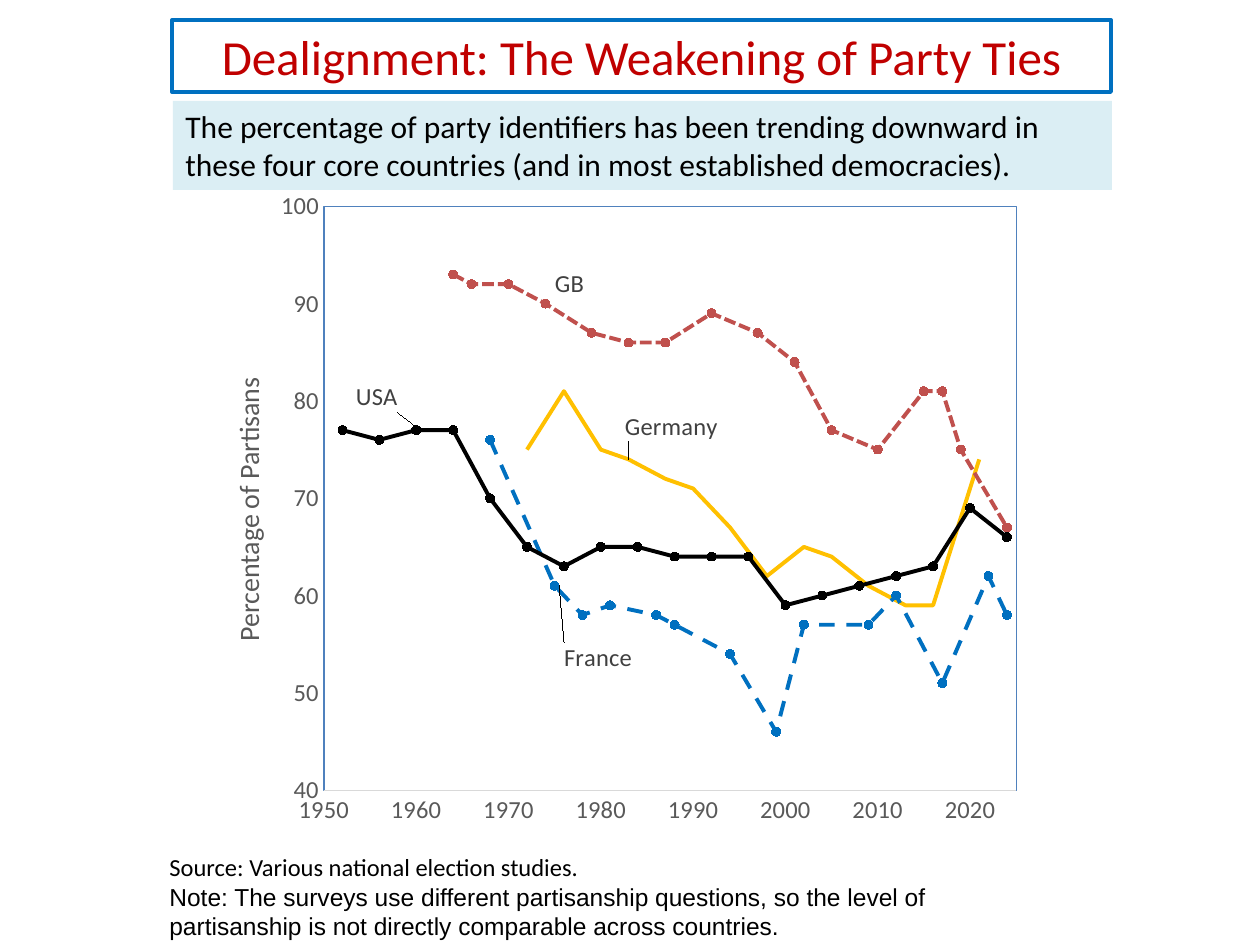
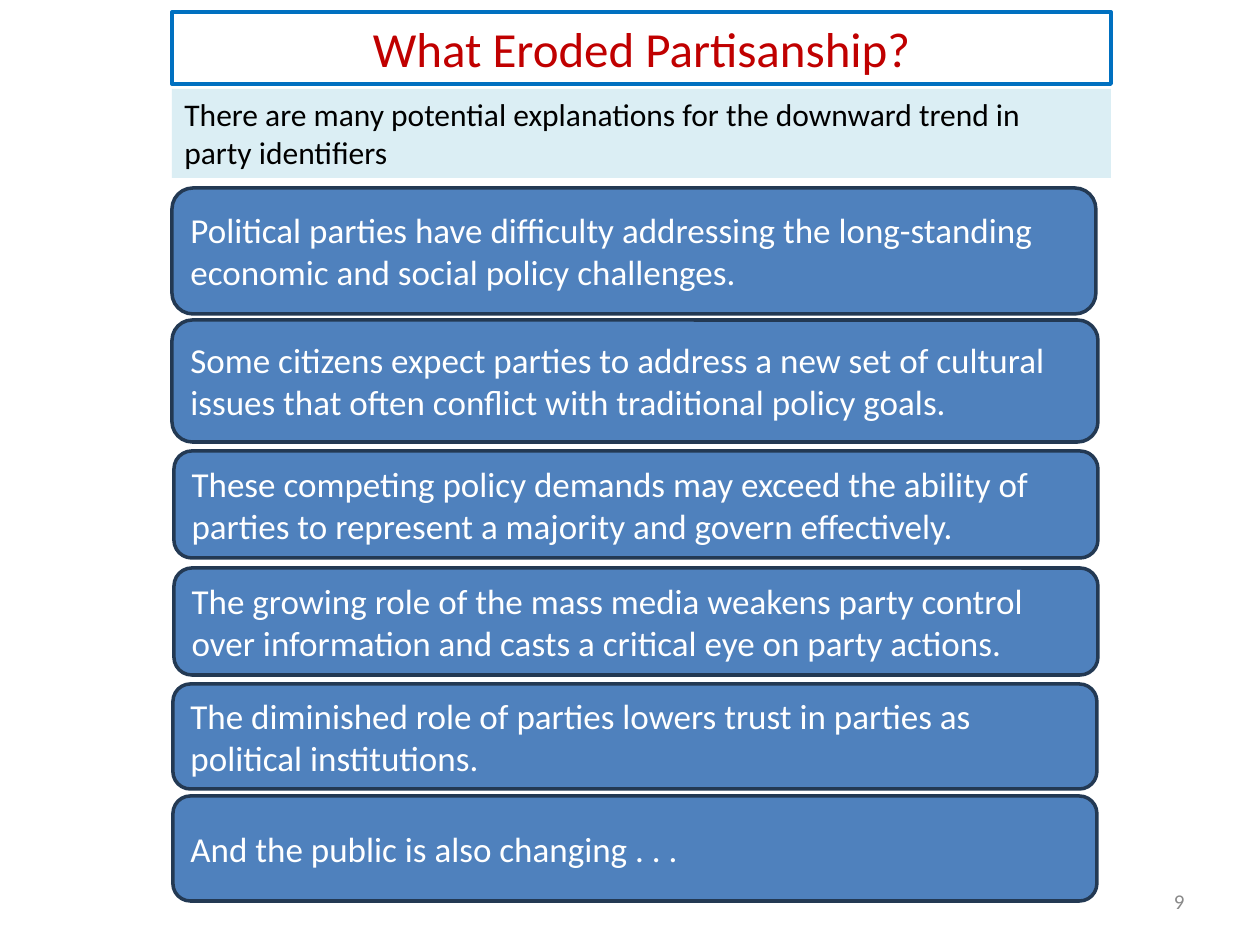
import lxml.etree
import pptx
import pptx.chart.data
import pptx.dml.color
import pptx.enum.chart
import pptx.enum.dml
import pptx.enum.shapes
import pptx.enum.text
import pptx.oxml.ns
import pptx.util

PX = 914400 // 126
Pt = pptx.util.Pt
qn = pptx.oxml.ns.qn
rgb = pptx.dml.color.RGBColor.from_string
SHAPE = pptx.enum.shapes.MSO_SHAPE
ALIGN = pptx.enum.text.PP_ALIGN
ANCHOR = pptx.enum.text.MSO_ANCHOR
DASH = pptx.enum.dml.MSO_LINE
MARKER = pptx.enum.chart.XL_MARKER_STYLE
TICK = pptx.enum.chart.XL_TICK_MARK

RED, BLUE, BLACK, WHITE, GREY = "C00000", "0070C0", "000000", "FFFFFF", "595959"
PALE, BOX_FILL, BOX_LINE = "DBEEF4", "4F81BD", "233953"
TITLE = {"size": 28, "color": RED, "line": (BLUE, 2.25), "align": ALIGN.CENTER,
         "anchor": ANCHOR.MIDDLE}
BAND = {"size": 18, "color": BLACK, "fill": PALE}
REASON = {"size": 20, "color": WHITE, "fill": BOX_FILL, "line": (BOX_LINE, 2),
          "anchor": ANCHOR.MIDDLE}


def style_box(sp, box, text, size, color, fill=None, line=None,
              align=ALIGN.LEFT, anchor=ANCHOR.TOP):
    """Place a shape or placeholder (box in px) and format its text."""
    for name, value in zip(("left", "top", "width", "height"), box):
        setattr(sp, name, value * PX)
    if fill:
        sp.fill.solid()
        sp.fill.fore_color.rgb = rgb(fill)
    else:
        sp.fill.background()
    if line:
        sp.line.color.rgb = rgb(line[0])
        sp.line.width = Pt(line[1])
    else:
        sp.line.fill.background()
    tf = sp.text_frame
    tf.text = text
    tf.word_wrap = True
    tf.auto_size = pptx.enum.text.MSO_AUTO_SIZE.NONE
    tf.vertical_anchor = anchor
    for p in tf.paragraphs:
        p.alignment = align
        for r in p.runs:
            r.font.name, r.font.size = "Calibri", Pt(size)
            r.font.color.rgb = rgb(color)
    return tf


def set_layout(parent, index, **values):
    """Give a chart part a manual layout, in fractions of the chart."""
    for old in parent.findall(qn("c:layout")):
        parent.remove(old)
    layout = lxml.etree.Element(qn("c:layout"))
    manual = lxml.etree.SubElement(layout, qn("c:manualLayout"))
    for name, value in values.items():
        lxml.etree.SubElement(manual, qn("c:" + name)).set("val", str(value))
    parent.insert(index, layout)


prs = pptx.Presentation()
prs.slide_width, prs.slide_height = pptx.util.Inches(10), pptx.util.Inches(7.5)

# Title and pale band on both slides
slides = []
for title, title_top, band, band_left, band_top in [
    ("Dealignment: The Weakening of Party Ties", 20,
     "The percentage of party identifiers has been trending downward in these "
     "four core countries (and in most established democracies).", 173, 101),
    ("What Eroded Partisanship?", 12,
     "There are many potential explanations for the downward trend in\v"
     "party identifiers", 172, 89),
]:
    s = prs.slides.add_slide(prs.slide_layouts[5])
    style_box(s.shapes.title, (172, title_top, 939, 72), title, **TITLE)
    sp = s.shapes.add_shape(SHAPE.RECTANGLE, 0, 0, PX, PX)
    sp.shadow.inherit = False
    style_box(sp, (band_left, band_top, 939, 89), band, **BAND)
    slides.append(s)
trend_slide, reasons_slide = slides

# Slide 1: share of partisans by country
# label: text, point index, x and y shift
countries = [
    {"name": "USA", "color": BLACK, "dash": None, "marker": MARKER.CIRCLE,
     "label": ("USA", 2, -0.08, -0.05),
     "years": range(1952, 2025, 4),
     "shares": [77, 76, 77, 77, 70, 65, 63, 65, 65, 64, 64, 64, 59, 60, 61, 62,
                63, 69, 66]},
    {"name": "Great Britain", "color": "C0504D", "dash": DASH.SQUARE_DOT,
     "marker": MARKER.CIRCLE, "label": ("GB", 3, 0.0, -0.03),
     "years": [1964, 1966, 1970, 1974, 1979, 1983, 1987, 1992, 1997, 2001, 2005,
               2010, 2015, 2017, 2019, 2024],
     "shares": [93, 92, 92, 90, 87, 86, 86, 89, 87, 84, 77, 75, 81, 81, 75, 67]},
    {"name": "France", "color": BLUE, "dash": DASH.DASH,
     "marker": MARKER.CIRCLE, "label": ("France", 1, 0.0, 0.11),
     "years": [1968, 1975, 1978, 1981, 1986, 1988, 1994, 1999, 2002, 2009, 2012,
               2017, 2022, 2024],
     "shares": [76, 61, 58, 59, 58, 57, 54, 46, 57, 57, 60, 51, 62, 58]},
    {"name": "Germany", "color": "FFC000", "dash": None, "marker": MARKER.NONE,
     "label": ("Germany", 3, -0.01, -0.05),
     "years": [1972, 1976, 1980, 1983, 1987, 1990, 1994, 1998, 2002, 2005, 2009,
               2013, 2016, 2021],
     "shares": [75, 81, 75, 74, 72, 71, 67, 62, 65, 64, 61, 59, 59, 74]},
]
data = pptx.chart.data.XyChartData()
for country in countries:
    series = data.add_series(country["name"])
    for year, share in zip(country["years"], country["shares"]):
        series.add_data_point(year, share)
chart = trend_slide.shapes.add_chart(
    pptx.enum.chart.XL_CHART_TYPE.XY_SCATTER_LINES,
    194 * PX, 190 * PX, 872 * PX, 654 * PX, data).chart
chart.has_title = chart.has_legend = False
chart.font.name, chart.font.size = "Calibri", Pt(10)
chart.plots[0].vary_by_categories = False

plot_area = chart._chartSpace.find(".//" + qn("c:plotArea"))
set_layout(plot_area, 0, layoutTarget="inner", xMode="edge", yMode="edge",
           x=0.149, y=0.025, w=0.794, h=0.893)
sp_pr = lxml.etree.SubElement(plot_area, qn("c:spPr"))
lxml.etree.SubElement(sp_pr, qn("a:noFill"))
border = lxml.etree.SubElement(sp_pr, qn("a:ln"), w="9525")
border_fill = lxml.etree.SubElement(border, qn("a:solidFill"))
lxml.etree.SubElement(border_fill, qn("a:srgbClr"), val="4F81BD")

for axis, low, high in [(chart.category_axis, 1950, 2025),
                        (chart.value_axis, 40, 100)]:
    for name, value in {"minimum_scale": low, "maximum_scale": high,
                        "major_unit": 10, "has_major_gridlines": False,
                        "major_tick_mark": TICK.NONE,
                        "minor_tick_mark": TICK.NONE}.items():
        setattr(axis, name, value)
    labels = axis.tick_labels
    labels.number_format, labels.number_format_is_linked = "General", False
    labels.font.name, labels.font.size = "Calibri", Pt(14)
    labels.font.color.rgb = rgb(GREY)
chart.category_axis.format.line.color.rgb = rgb("D9D9D9")
chart.category_axis.format.line.width = Pt(0.75)
chart.value_axis.format.line.fill.background()

axis_title = chart.value_axis.axis_title
p = axis_title.text_frame.paragraphs[0]
r = p.add_run()
r.text = "Percentage of Partisans"
r.font.name, r.font.size, r.font.bold = "Calibri", Pt(16), False
r.font.color.rgb = rgb(GREY)
axis_title.text_frame._txBody.bodyPr.set("rot", "-5400000")
axis_title.text_frame._txBody.bodyPr.set("vert", "horz")
set_layout(axis_title._element, 1, xMode="edge", yMode="edge", x=0.035, y=0.28)

C15 = "http://schemas.microsoft.com/office/drawing/2012/chart"
for series, country in zip(chart.plots[0].series, countries):
    series.smooth = False
    line = series.format.line
    line.color.rgb = rgb(country["color"])
    line.width, line.dash_style = Pt(2.25), country["dash"]
    series.marker.style = country["marker"]
    if country["marker"] != MARKER.NONE:
        series.marker.size = 5
        series.marker.format.fill.solid()
        series.marker.format.fill.fore_color.rgb = rgb(country["color"])
        series.marker.format.line.color.rgb = rgb(country["color"])

    text, index, dx, dy = country["label"]
    label = series.points[index].data_label
    r = label.text_frame.paragraphs[0].add_run()
    r.text = text
    r.font.name, r.font.size = "Calibri", Pt(14)
    r.font.color.rgb = rgb("404040")
    label.position = pptx.enum.chart.XL_LABEL_POSITION.RIGHT
    labels = series._element.find(qn("c:dLbls"))
    set_layout(labels.find(qn("c:dLbl")), 1, x=dx, y=dy)
    labels.find(qn("c:showVal")).set("val", "0")
    ext_list = lxml.etree.SubElement(labels, qn("c:extLst"))
    ext = lxml.etree.SubElement(ext_list, qn("c:ext"), nsmap={"c15": C15},
                                uri="{CE6537A1-D6FC-4f65-9D91-7224C49458BB}")
    lxml.etree.SubElement(ext, "{%s}showLeaderLines" % C15, val="1")

sp = trend_slide.shapes.add_textbox(0, 0, PX, PX)
tf = style_box(sp, (157, 846, 871, 102),
               "Source: Various national election studies.\n"
               "Note: The surveys use different partisanship questions, so the "
               "level of partisanship is not directly comparable across countries.",
               14, BLACK)
tf.paragraphs[1].runs[0].font.name = "Arial"

# Slide 2: explanations
for left, top, width, height, text in [
    (172, 188, 924, 126, "Political parties have difficulty addressing the "
     "long-standing economic and social policy challenges."),
    (172, 320, 926, 122, "Some citizens expect parties to address a new set of "
     "cultural issues that often conflict with traditional policy goals."),
    (174, 451, 924, 107, "These competing policy demands may exceed the ability "
     "of parties to represent a majority and govern effectively."),
    (174, 568, 924, 107, "The growing role of the mass media weakens party "
     "control over information and casts a critical eye on party actions."),
    (173, 684, 924, 105, "The diminished role of parties lowers trust in parties "
     "as political institutions."),
    (173, 796, 924, 105, "And the public is also changing . . ."),
]:
    sp = reasons_slide.shapes.add_shape(SHAPE.ROUNDED_RECTANGLE, 0, 0, PX, PX)
    sp.shadow.inherit = False
    style_box(sp, (left, top, width, height), text, **REASON)

sp = reasons_slide.shapes.add_textbox(0, 0, PX, PX)
style_box(sp, (903, 876, 294, 50), "9", 12, "898989",
          align=ALIGN.RIGHT, anchor=ANCHOR.MIDDLE)

prs.save("out.pptx")
